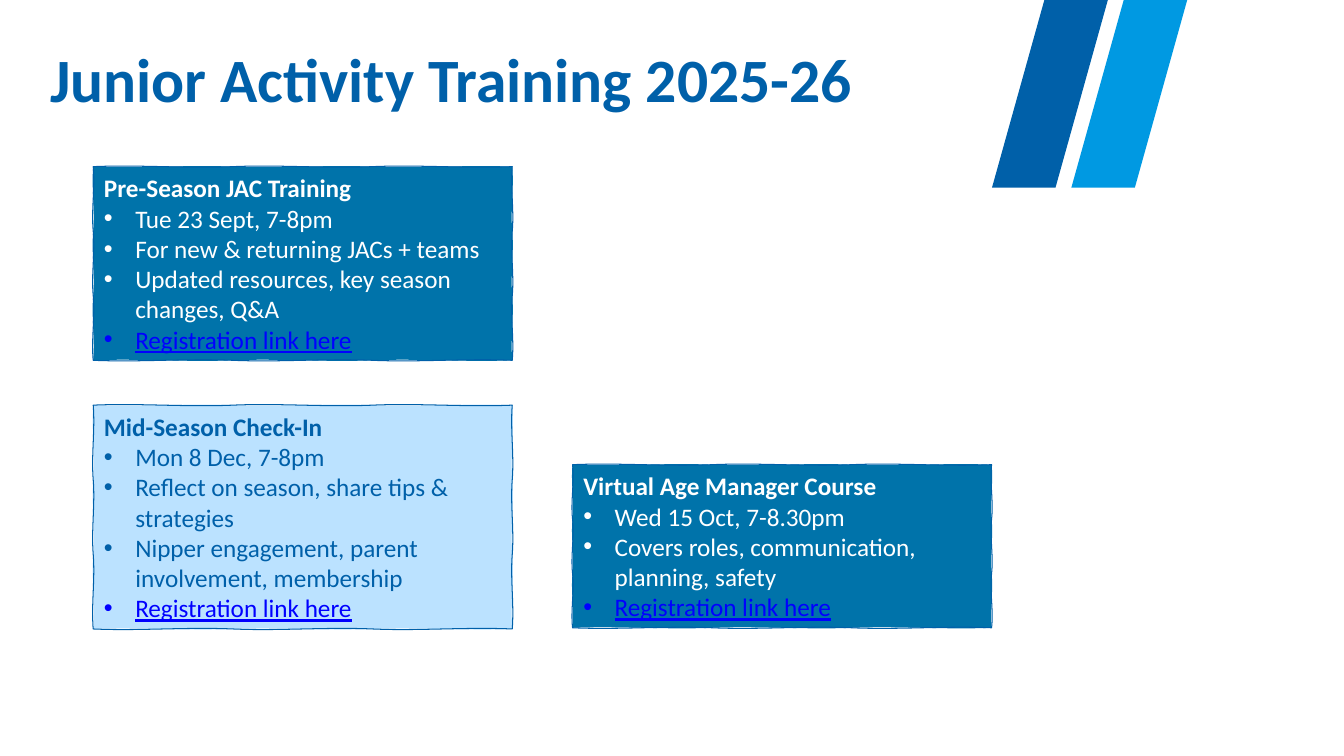
import pptx
import pptx.dml.color
import pptx.enum.text
import pptx.oxml.ns
import pptx.util
from lxml import etree

Cm = pptx.util.Cm
Pt = pptx.util.Pt
RGBColor = pptx.dml.color.RGBColor
qn = pptx.oxml.ns.qn

NAVY = RGBColor(0x00, 0x60, 0xA9)
SKY = RGBColor(0x00, 0x99, 0xE2)
TEAL = RGBColor(0x00, 0x73, 0xAA)
PALE = RGBColor(0xBB, 0xE2, 0xFF)
LINK = RGBColor(0x00, 0x00, 0xFF)
WHITE = RGBColor(0xFF, 0xFF, 0xFF)

CARD_WIDTH = 10.56
LINK_TEXT = "Registration link here"


class SlideBuilder:
    font = "Calibri"
    body_size = Pt(18)
    indent = Cm(0.79)
    wobble = 0.05
    curves_per_edge = 3

    def __init__(self, prs):
        self.s = prs.slides.add_slide(prs.slide_layouts[5])

    def style(self, p, size, color, bold=False, underline=False):
        for r in p.runs:
            f = r.font
            f.name, f.size, f.bold = self.font, size, bold
            f.color.rgb = color
            if underline:
                f.underline = True

    def title(self, text, left, top, width, height):
        sp = self.s.shapes.title
        sp.left, sp.top, sp.width, sp.height = map(Cm, (left, top, width, height))
        tf = sp.text_frame
        tf.text = text
        tf.word_wrap = True
        tf.auto_size = pptx.enum.text.MSO_AUTO_SIZE.NONE
        tf.vertical_anchor = pptx.enum.text.MSO_ANCHOR.TOP
        tf.margin_left = tf.margin_right = tf.margin_top = tf.margin_bottom = Cm(0.13)
        p = tf.paragraphs[0]
        p.alignment = pptx.enum.text.PP_ALIGN.LEFT
        p.line_spacing = 0.9
        self.style(p, Pt(44), NAVY, bold=True)

    def outline(self, points, fill=None, line=None):
        points = [(Cm(x), Cm(y)) for x, y in points]
        fb = self.s.shapes.build_freeform(*points[0])
        fb.add_line_segments(points[1:], close=True)
        sp = fb.convert_to_shape()
        sp.shadow.inherit = False
        if fill is None:
            sp.fill.background()
        else:
            sp.fill.solid()
            sp.fill.fore_color.rgb = fill
        if line is None:
            sp.line.fill.background()
        else:
            sp.line.color.rgb = line
            sp.line.width = Pt(0.75)
        return sp

    def band(self, left, color):
        width, height, slant = 1.6, 4.73, 1.32
        self.outline([(left, height), (left + slant, 0),
                      (left + slant + width, 0), (left + width, height)], fill=color)

    def sketch_points(self, left, top, width, height, sign):
        """Start point, then two controls and an end for each curve."""
        corners = [(left, top), (left + width, top),
                   (left + width, top + height), (left, top + height)]
        points = [corners[0]]
        for k, (x0, y0) in enumerate(corners):
            x1, y1 = corners[(k + 1) % 4]
            steps = 3 * self.curves_per_edge
            for i in range(1, steps + 1):
                d = (0, sign, -sign)[i % 3] * self.wobble
                x, y = x0 + (x1 - x0) * i / steps, y0 + (y1 - y0) * i / steps
                points.append((x, y + d) if k % 2 == 0 else (x + d, y))
        return points

    def sketch(self, box, sign, fill=None, line=None):
        sp = self.outline(self.sketch_points(*box, sign), fill, line)
        segments = list(sp._element.iter(qn("a:lnTo")))
        for i in range(0, len(segments), 3):
            curve = etree.Element(qn("a:cubicBezTo"))
            segments[i].addprevious(curve)
            for segment in segments[i:i + 3]:
                curve.append(segment[0])
                segment.getparent().remove(segment)
        return sp

    def bullet(self, p):
        pPr = p._p.get_or_add_pPr()
        pPr.set("marL", str(self.indent))
        pPr.set("indent", str(-self.indent))
        font = etree.SubElement(pPr, qn("a:buFont"))
        font.set("typeface", "Arial")
        char = etree.SubElement(pPr, qn("a:buChar"))
        char.set("char", "•")

    def card(self, left, top, height, fill, color, heading, items):
        box = (left, top, CARD_WIDTH, height)
        self.sketch(box, 1, fill=fill)
        sp = self.sketch(box, -1, line=NAVY)
        tf = sp.text_frame
        tf.word_wrap = True
        tf.vertical_anchor = pptx.enum.text.MSO_ANCHOR.MIDDLE
        tf.margin_left = tf.margin_right = Cm(0.32)
        tf.margin_top = tf.margin_bottom = Cm(0.13)
        for i, text in enumerate([heading, *items, LINK_TEXT]):
            p = tf.paragraphs[0] if i == 0 else tf.add_paragraph()
            p.text = text
            p.alignment = pptx.enum.text.PP_ALIGN.LEFT
            if i > 0:
                self.bullet(p)
            is_link = text == LINK_TEXT
            self.style(p, self.body_size, LINK if is_link else color,
                       bold=i == 0, underline=is_link)


def main():
    prs = pptx.Presentation()
    prs.slide_width, prs.slide_height = Cm(33.87), Cm(19.05)
    b = SlideBuilder(prs)

    # Corner bands
    b.band(25.0, NAVY)
    b.band(27.0, SKY)

    # Title
    b.title("Junior Activity Training 2025-26", 1.14, 1.12, 21.95, 3.0)

    # Training cards
    b.card(2.35, 4.2, 4.88, TEAL, WHITE, "Pre-Season JAC Training", [
        "Tue 23 Sept, 7-8pm",
        "For new & returning JACs + teams",
        "Updated resources, key season changes, Q&A"])
    b.card(14.43, 11.71, 4.11, TEAL, WHITE, "Virtual Age Manager Course", [
        "Wed 15 Oct, 7-8.30pm",
        "Covers roles, communication, planning, safety"])
    b.card(2.35, 10.21, 5.64, PALE, NAVY, "Mid-Season Check-In", [
        "Mon 8 Dec, 7-8pm",
        "Reflect on season, share tips & strategies",
        "Nipper engagement, parent involvement, membership"])

    prs.save("out.pptx")


if __name__ == "__main__":
    main()
